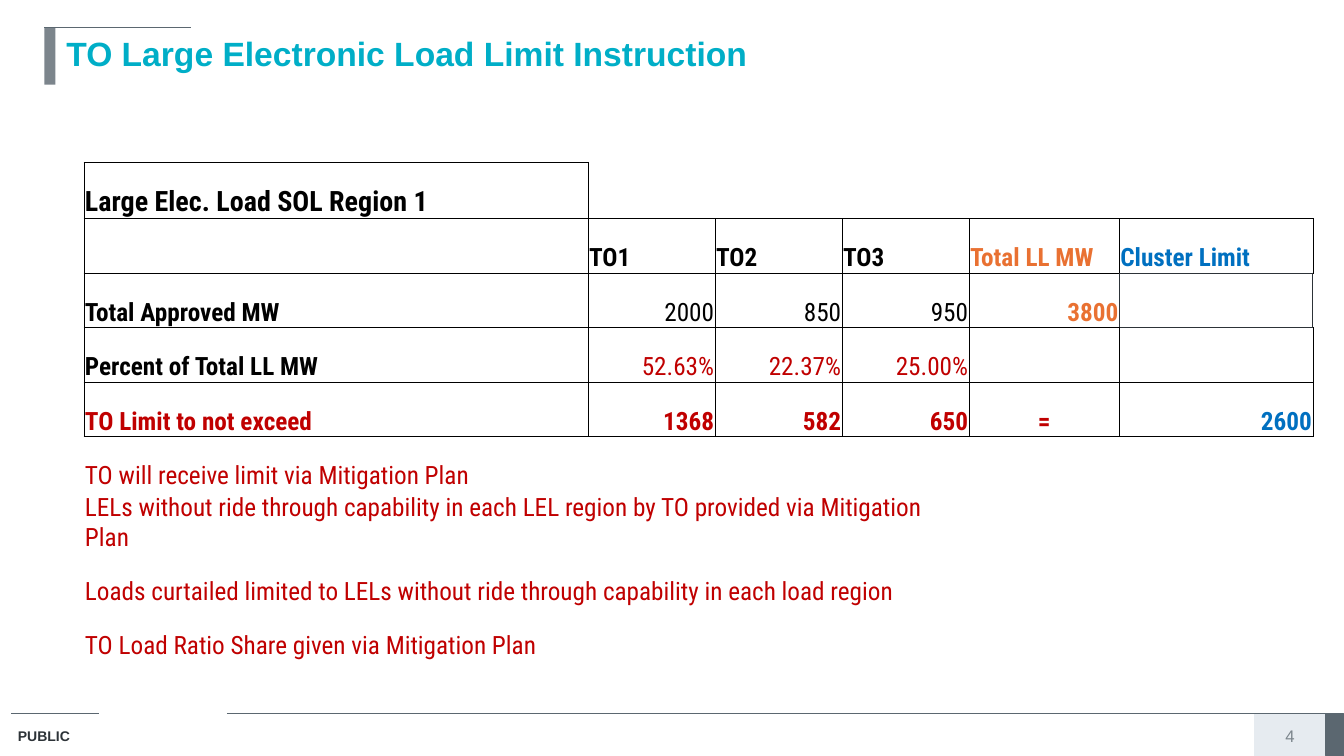
"""Build the load limit instruction slide with its allocation table."""
import pptx
import pptx.dml.color
import pptx.enum.shapes
import pptx.enum.text
import pptx.oxml.ns
import pptx.util
from lxml import etree

THEME = {
    "heading": "Arial", "body": "Roboto Condensed",
    "teal": "00AEC7", "slate": "5B6770", "grey": "7C858C", "pale": "E6EBF0",
    "ink": "2D3338", "black": "000000", "red": "C00000",
    "orange": "E97132", "blue": "0070C0",
    "title": 24, "region": 20, "cell": 18, "number": 12, "footer": 10,
}
ALIGN = pptx.enum.text.PP_ALIGN
ANCHOR = pptx.enum.text.MSO_ANCHOR
rgb = pptx.dml.color.RGBColor.from_string

deck = pptx.Presentation()
deck.slide_width = pptx.util.Inches(13.33)
deck.slide_height = pptx.util.Inches(7.5)
page = deck.slides.add_slide(deck.slide_layouts[6])


def place(*shares):
    """Turn alternating percentages of slide width and height into lengths."""
    sides = (deck.slide_width, deck.slide_height)
    return [round(share * sides[i % 2] / 100) for i, share in enumerate(shares)]


def write(para, text, font, size, color, bold, align):
    """Put one formatted run into a paragraph."""
    para.alignment = align
    span = para.add_run()
    span.text = text
    formats = {"name": THEME[font], "size": pptx.util.Pt(THEME[size]), "bold": bold}
    for name, value in formats.items():
        setattr(span.font, name, value)
    span.font.color.rgb = rgb(THEME[color])


blocks = [
    ((93.32, 94.4, 5.85, 5.6), "pale", None),
    ((98.65, 94.4, 1.35, 5.6), "slate", "slate"),
    ((3.3, 3.6, 0.83, 7.6), "grey", None),
]
for shares, fill, outline in blocks:
    block = page.shapes.add_shape(
        pptx.enum.shapes.MSO_SHAPE.RECTANGLE, *place(*shares))
    block.shadow.inherit = False
    block.fill.solid()
    block.fill.fore_color.rgb = rgb(THEME[fill])
    if outline:
        block.line.color.rgb = rgb(THEME[outline])
        block.line.width = pptx.util.Pt(0.75)
    else:
        block.line.fill.background()

for left, right, height in [(0.83, 7.35, 94.4), (16.88, 99.02, 94.4), (3.3, 14.18, 3.6)]:
    rule = page.shapes.add_connector(
        pptx.enum.shapes.MSO_CONNECTOR.STRAIGHT, *place(left, height, right, height))
    rule.line.color.rgb = rgb(THEME["slate"])
    rule.line.width = pptx.util.Pt(0.75)
    etree.SubElement(rule._element.spPr, pptx.oxml.ns.qn("a:effectLst"))

labels = [
    ((0.6, 95.6, 10.2, 3.6), "PUBLIC", "footer", "ink", True, ALIGN.LEFT, ANCHOR.TOP),
    ((4.2, 3.6, 92.5, 7.6), "TO Large Electronic Load Limit Instruction",
     "title", "teal", True, ALIGN.LEFT, ANCHOR.MIDDLE),
    ((93.32, 95.73, 5.33, 3.2), "4", "number", "grey", False, ALIGN.CENTER, ANCHOR.MIDDLE),
]
for shares, text, size, color, bold, align, anchor in labels:
    frame = page.shapes.add_textbox(*place(*shares)).text_frame
    frame.word_wrap = True
    frame.vertical_anchor = anchor
    para = frame.paragraphs[0]
    if size == "title":
        para.line_spacing = 0.9
    write(para, text, "heading", size, color, bold, align)

rows = [
    ["Large Elec. Load SOL Region 1"],
    ["", "TO1", "TO2", "TO3", "Total LL MW", "Cluster Limit"],
    ["Total Approved MW", "2000", "850", "950", "3800"],
    ["Percent of Total LL MW", "52.63%", "22.37%", "25.00%"],
    ["TO Limit to not exceed", "1368", "582", "650", "=", "2600"],
    ["TO will receive limit via Mitigation Plan"],
    ["LELs without ride through capability in each LEL region by TO provided via Mitigation Plan"],
    ["Loads curtailed limited to LELs without ride through capability in each load region"],
    ["TO Load Ratio Share given via Mitigation Plan"],
]
column_shares = [37.51, 9.45, 9.45, 9.45, 11.18, 14.4]
accents = {(1, 4): "orange", (2, 4): "orange", (1, 5): "blue", (4, 5): "blue"}
merges = {5: 4, 6: 4, 7: 4, 8: 2}
framed = {(r, c) for r in range(1, 5) for c in range(6)} | {(0, 0)}
highlight = (2, 5)
sides = {"lnL": (0, -1), "lnR": (0, 1), "lnT": (-1, 0), "lnB": (1, 0)}
margins = {"margin_left": 0.01, "margin_right": 0.01, "margin_top": 0.01, "margin_bottom": 0}

table = page.shapes.add_table(
    len(rows), len(column_shares), *place(6.25, 21.47, 91.45, 64.8)).table
table.first_row = table.horz_banding = False
for column, share in zip(table.columns, column_shares):
    column.width = place(share)[0]
for r, row in enumerate(table.rows):
    row.height = place(0, 7.47 if r == 0 else 7.2)[1]

for r, texts in enumerate(rows):
    for c in range(len(column_shares)):
        cell = table.cell(r, c)
        cell.vertical_anchor = ANCHOR.BOTTOM
        for name, inches in margins.items():
            setattr(cell, name, pptx.util.Inches(inches))
        for side, (down, across) in sides.items():
            pair = {(r, c), (r + down, c + across)}
            thick = highlight in pair
            edge = etree.SubElement(
                cell._tc.get_or_add_tcPr(), pptx.oxml.ns.qn(f"a:{side}"),
                w=str(pptx.util.Pt(1 if thick else 0.5)))
            if pair & framed:
                paint = etree.SubElement(edge, pptx.oxml.ns.qn("a:solidFill"))
                etree.SubElement(paint, pptx.oxml.ns.qn("a:srgbClr"),
                                 val=THEME["ink" if thick else "black"])
            else:
                etree.SubElement(edge, pptx.oxml.ns.qn("a:noFill"))
        cell.fill.background()
        if c < len(texts) and texts[c]:
            red = r >= 4 or (r == 3 and c > 0)
            color = accents.get((r, c), "red" if red else "black")
            bold = r in (0, 1, 4) or (r < 5 and c in (0, 4))
            align = ALIGN.RIGHT if r > 1 and c > 0 else ALIGN.LEFT
            if texts[c] == "=":
                align = ALIGN.CENTER
            write(cell.text_frame.paragraphs[0], texts[c], "body",
                  "region" if r == 0 else "cell", color, bold, align)

for r, count in merges.items():
    table.cell(r, 0).merge(table.cell(r, count - 1))

deck.save("out.pptx")
